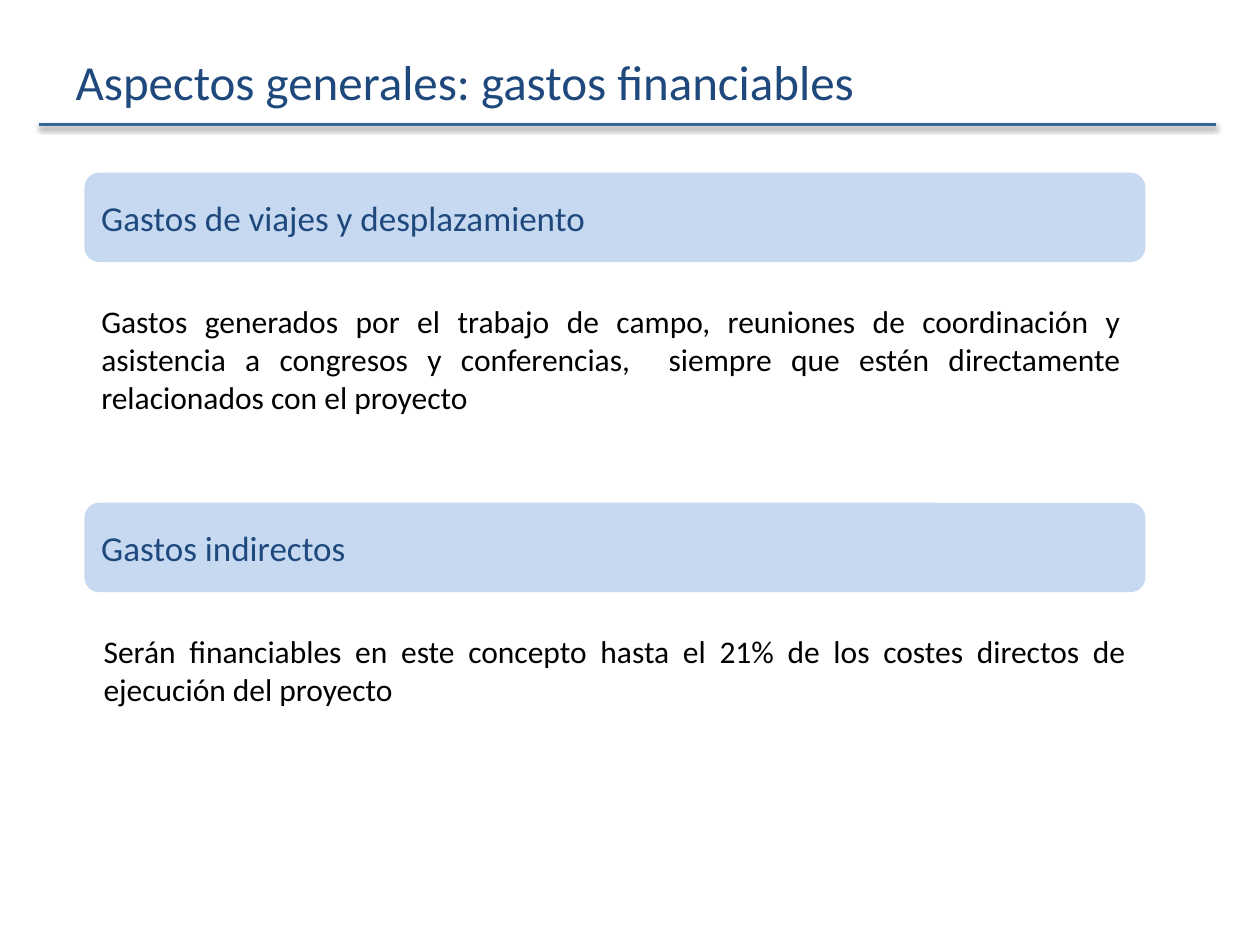
from lxml import etree
from pptx import Presentation
from pptx.dml.color import RGBColor
from pptx.enum.shapes import MSO_CONNECTOR, MSO_SHAPE
from pptx.enum.text import MSO_ANCHOR, PP_ALIGN
from pptx.oxml.ns import qn
from pptx.util import Inches, Pt

NAVY = RGBColor(0x1F, 0x49, 0x7D)
RULE = RGBColor(0x33, 0x66, 0x99)
PALE = RGBColor(0xC6, 0xD9, 0xF1)
WHITE = RGBColor(0xFF, 0xFF, 0xFF)
BLACK = RGBColor(0, 0, 0)
LEFT, JUSTIFY = PP_ALIGN.LEFT, PP_ALIGN.JUSTIFY
MIDDLE = MSO_ANCHOR.MIDDLE
ROUNDED = MSO_SHAPE.ROUNDED_RECTANGLE
STRAIGHT = MSO_CONNECTOR.STRAIGHT

COL_LEFT, COL_WIDTH, HEADER_HEIGHT = 0.67, 8.42, 0.71
SECTIONS = [
    (1.37, "Gastos de viajes y desplazamiento",
     "Gastos generados por el trabajo de campo, reuniones de coordinación y "
     "asistencia a congresos y conferencias,  siempre que estén directamente "
     "relacionados con el proyecto",
     dict(gap=0.1, body_height=1.34, shift=-0.03)),
    (3.99, "Gastos indirectos",
     "Serán financiables en este concepto hasta el 21% de los costes directos "
     "de ejecución del proyecto",
     dict(gap=0.07, body_height=1.1)),
]


def write(sp, text, size, color, align=LEFT):
    tf = sp.text_frame
    tf.word_wrap = True
    tf.vertical_anchor = MIDDLE
    p = tf.paragraphs[0]
    p.alignment = align
    r = p.add_run()
    r.text = text
    r.font.name = "Calibri"
    r.font.size = Pt(size)
    r.font.color.rgb = color


def add_panel(s, box, fill, text, **fmt):
    sp = s.shapes.add_shape(ROUNDED, *map(Inches, box))
    sp.shadow.inherit = False
    sp.fill.solid()
    sp.fill.fore_color.rgb = fill
    sp.line.fill.background()
    write(sp, text, **fmt)


def add_rule(s, x1, x2, y):
    ln = s.shapes.add_connector(STRAIGHT, Inches(x1), Inches(y), Inches(x2), Inches(y))
    ln.line.color.rgb = RULE
    ln.line.width = Pt(2)
    effects = etree.SubElement(ln._element.spPr, qn("a:effectLst"))
    shadow = etree.SubElement(effects, qn("a:outerShdw"), blurRad=str(Pt(3.1)),
                              dist=str(Pt(1.6)), dir="5400000", rotWithShape="0")
    color = etree.SubElement(shadow, qn("a:srgbClr"), val="000000")
    etree.SubElement(color, qn("a:alpha"), val="38000")


def add_title(s, box, text):
    sp = s.shapes.title
    sp.left, sp.top, sp.width, sp.height = map(Inches, box)
    write(sp, text, size=28, color=NAVY)


def add_section(s, top, header, body, gap, body_height, shift=0):
    body_top = top + HEADER_HEIGHT + gap
    add_panel(s, (COL_LEFT + shift, body_top, COL_WIDTH, body_height), WHITE, body,
              size=18, color=BLACK, align=JUSTIFY)
    add_panel(s, (COL_LEFT, top, COL_WIDTH, HEADER_HEIGHT), PALE, header,
              size=20, color=NAVY)


def main():
    prs = Presentation()
    prs.slide_width, prs.slide_height = Inches(10), Inches(7.5)
    s = prs.slides.add_slide(prs.slide_layouts[5])
    add_rule(s, 0.31, 9.65, 0.99)
    add_title(s, (0.5, 0.3, 9, 0.69), "Aspectos generales: gastos financiables")
    for top, header, body, layout in SECTIONS:
        add_section(s, top, header, body, **layout)
    prs.save("out.pptx")


if __name__ == "__main__":
    main()
